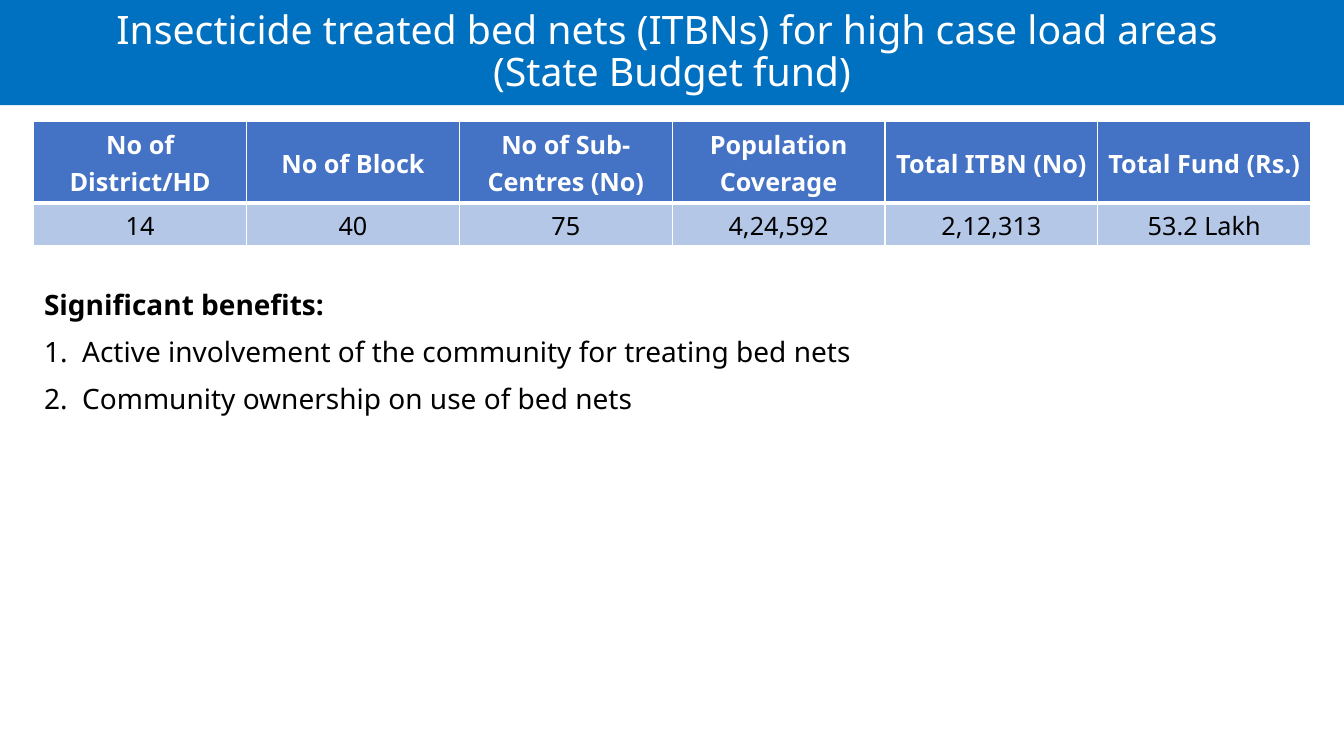
import dataclasses

import lxml.etree
import pptx
import pptx.dml.color
import pptx.enum.shapes
import pptx.enum.text
import pptx.oxml.ns
import pptx.util
from pptx.util import Cm, Pt

ALIGN = pptx.enum.text.PP_ALIGN
MIDDLE = pptx.enum.text.MSO_ANCHOR.MIDDLE


@dataclasses.dataclass(frozen=True)
class Theme:
    font: str = "Noto Sans"
    banner: str = "0070C0"
    header: str = "4472C4"
    body: str = "B4C7E7"
    white: str = "FFFFFF"
    black: str = "000000"
    title_size: int = 28
    list_size: int = 20
    table_size: int = 18


@dataclasses.dataclass(frozen=True)
class Column:
    heading: str
    value: str


@dataclasses.dataclass(frozen=True)
class RowStyle:
    fill: str
    color: str
    bold: bool
    height: float
    bottom_border: float


THEME = Theme()
TITLE = (
    "Insecticide treated bed nets (ITBNs) for high case load areas ",
    "(State Budget fund)",
)
COLUMNS = (
    Column("No of District/HD", "14"),
    Column("No of Block", "40"),
    Column("No of Sub-Centres (No)", "75"),
    Column("Population Coverage", "4,24,592"),
    Column("Total ITBN (No)", "2,12,313"),
    Column("Total Fund (Rs.)", "53.2 Lakh"),
)
ROW_STYLES = (
    RowStyle(THEME.header, THEME.white, True, 2.06, 3),
    RowStyle(THEME.body, THEME.black, False, 1.06, 1),
)
BENEFITS_HEADING = "Significant benefits:"
BENEFITS = (
    "Active involvement of the community for treating bed nets",
    "Community ownership on use of bed nets",
)


def rgb(value: str) -> pptx.dml.color.RGBColor:
    return pptx.dml.color.RGBColor.from_string(value)


def write(para, text: str, size: int, color: str, align, spacing: float, bold: bool = False) -> None:
    para.text = text
    para.alignment = align
    para.line_spacing = spacing
    para.font.name = THEME.font
    para.font.size = Pt(size)
    para.font.bold = bold
    para.font.color.rgb = rgb(color)


def add_element(parent, tag: str, **attributes: str):
    return lxml.etree.SubElement(parent, pptx.oxml.ns.qn(tag), attributes)


def set_borders(cell, top: float, bottom: float) -> None:
    properties = cell._tc.get_or_add_tcPr()
    widths = {"a:lnL": 1, "a:lnR": 1, "a:lnT": top, "a:lnB": bottom}
    for index, (tag, width) in enumerate(widths.items()):
        line = add_element(properties, tag, w=str(Pt(width)))
        add_element(add_element(line, "a:solidFill"), "a:srgbClr", val=THEME.white)
        properties.insert(index, line)  # borders come before the fill


def number_paragraph(para, indent: int) -> None:
    properties = para._p.get_or_add_pPr()
    properties.set("marL", str(indent))
    properties.set("indent", str(-indent))
    add_element(properties, "a:buFont", typeface="+mj-lt")
    add_element(properties, "a:buAutoNum", type="arabicPeriod")


def add_table(page) -> None:
    frame = page.shapes.add_table(
        len(ROW_STYLES), len(COLUMNS), Cm(0.85), Cm(3.06), Cm(32.18), Cm(3.12))
    table = frame.table
    for row_index, style in enumerate(ROW_STYLES):
        table.rows[row_index].height = Cm(style.height)
        top_border = ROW_STYLES[row_index - 1].bottom_border if row_index else 1
        for column_index, column in enumerate(COLUMNS):
            cell = table.cell(row_index, column_index)
            cell.fill.solid()
            cell.fill.fore_color.rgb = rgb(style.fill)
            cell.vertical_anchor = MIDDLE
            cell.margin_left = cell.margin_right = Cm(0.18)
            cell.margin_top = cell.margin_bottom = 0
            text = column.value if row_index else column.heading
            write(cell.text_frame.paragraphs[0], text, THEME.table_size,
                  style.color, ALIGN.CENTER, 1.07, style.bold)
            set_borders(cell, top_border, style.bottom_border)


def add_banner(page, width: int) -> None:
    banner = page.shapes.add_shape(
        pptx.enum.shapes.MSO_SHAPE.RECTANGLE, 0, 0, width, Cm(2.65))
    banner.shadow.inherit = False
    banner.fill.solid()
    banner.fill.fore_color.rgb = rgb(THEME.banner)
    banner.line.fill.background()
    frame = banner.text_frame
    frame.word_wrap = True
    frame.vertical_anchor = MIDDLE
    for index, text in enumerate(TITLE):
        para = frame.add_paragraph() if index else frame.paragraphs[0]
        write(para, text, THEME.title_size, THEME.white, ALIGN.CENTER, 0.9)


def add_benefits(page) -> None:
    box = page.shapes.add_textbox(Cm(0.86), Cm(7.21), Cm(31.55), Cm(3.68))
    frame = box.text_frame
    frame.word_wrap = True
    for index, text in enumerate((BENEFITS_HEADING, *BENEFITS)):
        para = frame.add_paragraph() if index else frame.paragraphs[0]
        write(para, text, THEME.list_size, THEME.black, ALIGN.JUSTIFY, 0.9, index == 0)
        para.space_before = para.space_after = Pt(6)
        if index:
            # Numbering must precede the default run properties
            properties = para._p.get_or_add_pPr()
            number_paragraph(para, Cm(0.96))
            properties.append(properties.find(pptx.oxml.ns.qn("a:defRPr")))


def main() -> None:
    deck = pptx.Presentation()
    deck.slide_width, deck.slide_height = Cm(33.87), Cm(19.05)
    page = deck.slides.add_slide(deck.slide_layouts[6])

    # Key figures
    add_table(page)
    # Title banner
    add_banner(page, deck.slide_width)
    # Numbered benefits
    add_benefits(page)

    deck.save("out.pptx")


if __name__ == "__main__":
    main()
